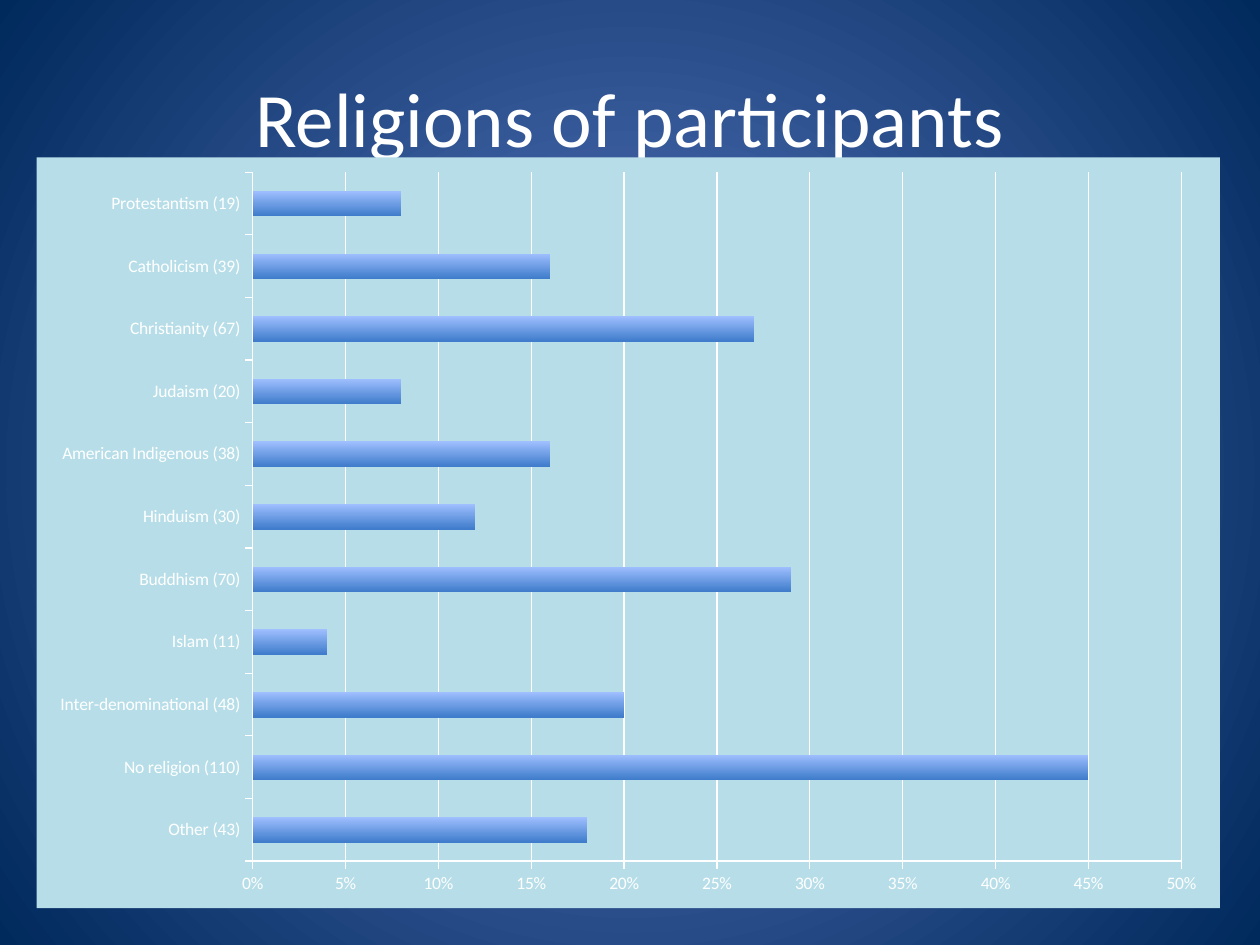
import dataclasses

import lxml.etree
import pptx
import pptx.chart.data
import pptx.dml.color
import pptx.enum.chart
import pptx.enum.text
import pptx.oxml
import pptx.oxml.ns
import pptx.util

Cm = pptx.util.Cm
qn = pptx.oxml.ns.qn


@dataclasses.dataclass(frozen=True)
class Theme:
    font: str = "Calibri"
    title_size: int = 44
    chart_size: int = 10
    text: str = "FFFFFF"
    panel: str = "B7DEE8"
    background: tuple = ("5E7CC5", "00295C")
    bar: tuple = ("9FBFFF", "3F7CCB")


RELIGIONS = {
    "Other (43)": 0.18,
    "No religion (110)": 0.45,
    "Inter-denominational (48)": 0.2,
    "Islam (11)": 0.04,
    "Buddhism (70)": 0.29,
    "Hinduism (30)": 0.12,
    "American Indigenous (38)": 0.16,
    "Judaism (20)": 0.08,
    "Christianity (67)": 0.27,
    "Catholicism (39)": 0.16,
    "Protestantism (19)": 0.08,
}


def rgb(color):
    return pptx.dml.color.RGBColor.from_string(color)


def format_font(font, name, size, color):
    font.name = name
    font.size = pptx.util.Pt(size)
    font.color.rgb = rgb(color)


def write_text(text_frame, text, *, alignment, **font_format):
    paragraph = text_frame.paragraphs[0]
    paragraph.alignment = alignment
    run = paragraph.add_run()
    run.text = text
    format_font(run.font, **font_format)


def fill_gradient(fill, colors):
    fill.gradient()
    fill.gradient_angle = 270
    for stop, color, position in zip(fill.gradient_stops, colors, (0, 1)):
        stop.color.rgb = rgb(color)
        stop.position = position


class SlideBuilder:
    def __init__(self, slide, theme):
        self.slide = slide
        self.theme = theme

    def background(self):
        background = self.slide.background
        fill_gradient(background.fill, self.theme.background)
        linear = next(background.element.iter(qn("a:lin")))
        path = pptx.oxml.parse_xml(
            f'<a:path {pptx.oxml.ns.nsdecls("a")} path="circle">'
            '<a:fillToRect l="50000" t="50000" r="50000" b="50000"/></a:path>'
        )
        linear.getparent().replace(linear, path)

    def title(self, text, left, top, width, height):
        title = self.slide.shapes.title
        title.left, title.top, title.width, title.height = left, top, width, height
        title.text_frame.vertical_anchor = pptx.enum.text.MSO_ANCHOR.MIDDLE
        write_text(
            title.text_frame,
            text,
            alignment=pptx.enum.text.PP_ALIGN.CENTER,
            name=self.theme.font,
            size=self.theme.title_size,
            color=self.theme.text,
        )

    def bar_chart(self, values, left, top, width, height):
        data = pptx.chart.data.CategoryChartData(number_format="0%")
        data.categories = list(values)
        data.add_series("Series 1", list(values.values()))
        chart = self.slide.shapes.add_chart(
            pptx.enum.chart.XL_CHART_TYPE.BAR_CLUSTERED,
            left, top, width, height, data,
        ).chart
        chart.has_legend = False
        chart.has_title = False
        format_font(
            chart.font, self.theme.font, self.theme.chart_size, self.theme.text
        )
        self.chart_panel(chart)

        plot = chart.plots[0]
        plot.gap_width = 150
        plot.vary_by_categories = False
        fill_gradient(plot.series[0].format.fill, self.theme.bar)

        value_axis = chart.value_axis
        value_axis.minimum_scale = 0
        value_axis.maximum_scale = 0.5
        value_axis.major_unit = 0.05
        value_axis.has_major_gridlines = True
        value_axis.tick_labels.number_format = "0%"
        value_axis.tick_labels.number_format_is_linked = False
        for axis in (chart.category_axis, value_axis):
            axis.major_tick_mark = pptx.enum.chart.XL_TICK_MARK.OUTSIDE
            self.chart_line(axis.format.line)
        self.chart_line(value_axis.major_gridlines.format.line)

    def chart_line(self, line):
        line.color.rgb = rgb(self.theme.text)
        line.width = pptx.util.Pt(0.75)

    def chart_panel(self, chart):
        panel = pptx.oxml.parse_xml(
            f'<c:spPr {pptx.oxml.ns.nsdecls("c", "a")}><a:solidFill>'
            f'<a:srgbClr val="{self.theme.panel}"/></a:solidFill>'
            "<a:ln><a:noFill/></a:ln></c:spPr>"
        )
        chart.element.find(qn("c:txPr")).addprevious(panel)


def main():
    presentation = pptx.Presentation()
    presentation.slide_width = Cm(25.4)
    presentation.slide_height = Cm(19.05)
    slide = presentation.slides.add_slide(presentation.slide_layouts[5])
    builder = SlideBuilder(slide, Theme())
    builder.background()
    builder.title(
        "Religions of participants", Cm(1.27), Cm(0.76), Cm(22.86), Cm(3.18)
    )
    builder.bar_chart(RELIGIONS, Cm(0.74), Cm(3.17), Cm(23.85), Cm(15.14))
    presentation.save("out.pptx")


if __name__ == "__main__":
    main()
